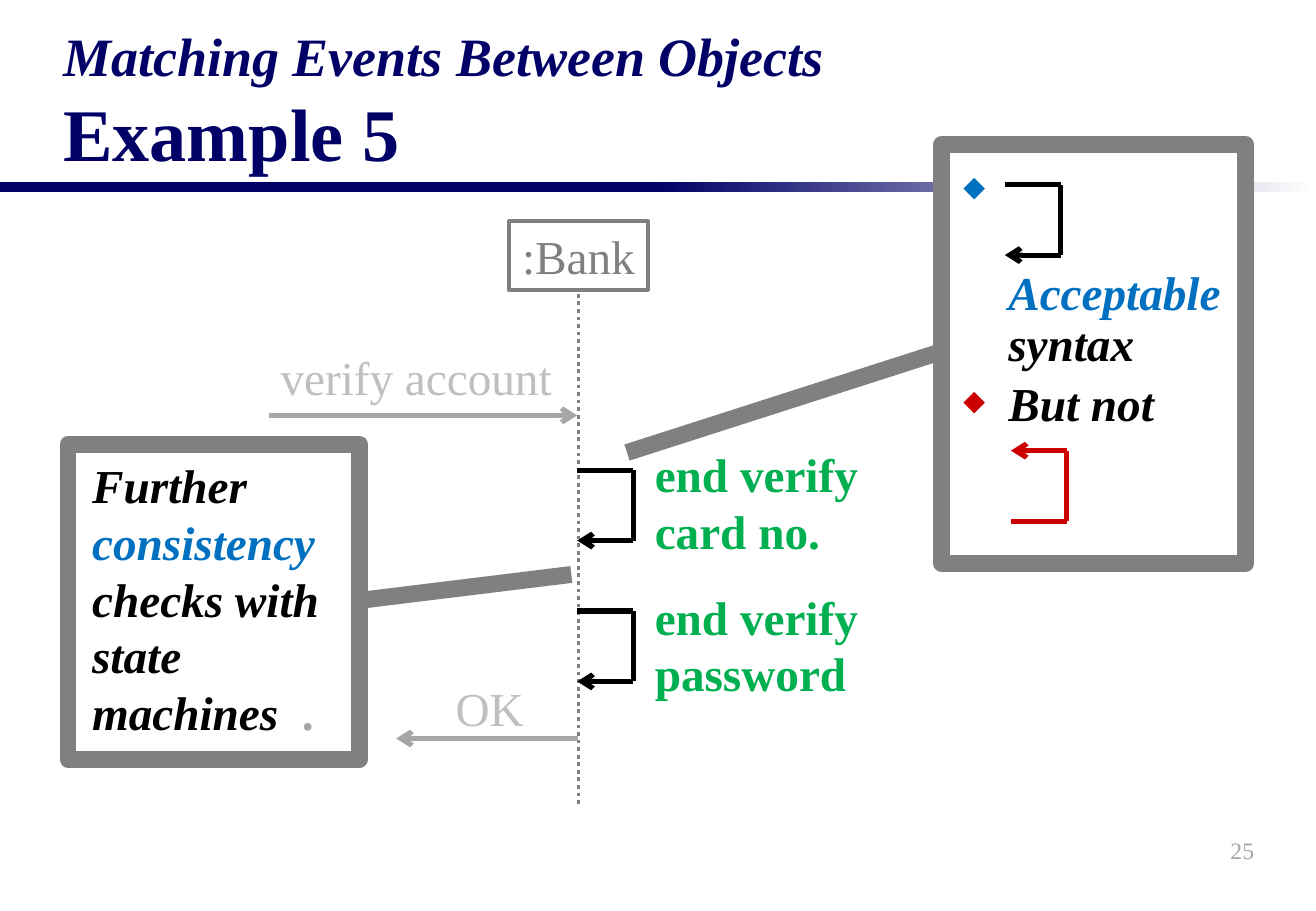
import pptx
import pptx.util
import pptx.dml.color
import pptx.enum.dml
import pptx.enum.shapes
import pptx.enum.text
import pptx.oxml
import pptx.oxml.ns
from dataclasses import dataclass

Inches, Pt = pptx.util.Inches, pptx.util.Pt
Shape = pptx.enum.shapes.MSO_SHAPE
Align = pptx.enum.text.PP_ALIGN
Anchor = pptx.enum.text.MSO_ANCHOR


@dataclass(frozen=True)
class Theme:
    font: str = "Times New Roman"
    navy: str = "000066"
    white: str = "FFFFFF"
    black: str = "000000"
    frame: str = "808080"
    arrow: str = "A6A6A6"
    faded: str = "BFBFBF"
    green: str = "00B050"
    blue: str = "0070C0"
    red: str = "CC0000"
    title: int = 44
    subtitle: int = 32
    body: int = 28
    number: int = 14
    thin: float = 2.25
    stroke: int = 3
    thick: int = 10


THEME = Theme()

TITLE = [[("Matching Events Between Objects\n", {"size": THEME.subtitle, "italic": True}),
          ("Example 5", {})]]
LABELS = [
    ("verify account", (2.21, 2.82, 2.43, 0.57), {"color": THEME.faded, "align": Align.CENTER}),
    ("OK", (3.65, 5.54, 0.76, 0.57), {"color": THEME.faded, "align": Align.CENTER}),
    ("end verify\ncard no.", (5.29, 3.62, 1.89, 1.04), {"color": THEME.green, "bold": True}),
    ("end verify\npassword", (5.29, 4.79, 1.89, 1.04), {"color": THEME.green, "bold": True}),
    ("25", (8.16, 6.75, 2.26, 0.5),
     {"color": THEME.arrow, "size": THEME.number, "align": Align.RIGHT, "anchor": Anchor.MIDDLE}),
]
CALLOUTS = [
    ((7.75, 1.19, 2.5, 3.45), (0.495, -0.005, 0.735, -1.036)),
    ((0.56, 3.66, 2.4, 2.59), (0.495, 1.005, 0.413, 1.726)),
]
SYNTAX_NOTE = [[("\n\nAcceptable\n", {"color": THEME.blue}), ("syntax", {})], [("But not", {})]]
CHECKS_NOTE = [[("Further\n", {}), ("consistency\n", {"color": THEME.blue}),
                ("checks with\nstate\nmachines  ", {}),
                (".", {"color": THEME.arrow, "italic": False})]]
MESSAGES = [((2.21, 3.42), (4.75, 3.42)), ((4.76, 6.08), (3.26, 6.08))]
LOOP_WIDTH, LOOP_HEIGHT = 0.46, 0.58
LOOPS = [
    (4.75, 3.87, LOOP_HEIGHT, THEME.black),
    (4.75, 5.03, LOOP_HEIGHT, THEME.black),
    (8.27, 1.52, LOOP_HEIGHT, THEME.black),
    (8.32, 4.29, -LOOP_HEIGHT, THEME.red),
]


def rgb(color):
    return pptx.dml.color.RGBColor.from_string(color)


def add_xml(parent, tag, **attributes):
    child = pptx.oxml.parse_xml(f"<a:{tag} {pptx.oxml.ns.nsdecls('a')}/>")
    for name, value in attributes.items():
        child.set(name, value)
    parent.append(child)
    return child


def write(frame, paragraphs, size=THEME.body, color=THEME.black, bold=False, italic=False,
          align=Align.LEFT, anchor=Anchor.TOP, wrap=False):
    if isinstance(paragraphs, str):
        paragraphs = [[(line, {})] for line in paragraphs.split("\n")]
    frame.word_wrap = wrap
    frame.auto_size = pptx.enum.text.MSO_AUTO_SIZE.NONE
    frame.vertical_anchor = anchor
    for index, spans in enumerate(paragraphs):
        para = frame.paragraphs[0] if index == 0 else frame.add_paragraph()
        para.alignment = align
        para.font.size = Pt(size)
        for text, changes in spans:
            look = {"size": size, "color": color, "bold": bold, "italic": italic, **changes}
            for number, line in enumerate(text.split("\n")):
                if number:
                    para.add_line_break()
                if line:
                    span = para.add_run()
                    span.text = line
                    span.font.name = THEME.font
                    span.font.size = Pt(look["size"])
                    span.font.bold = look["bold"]
                    span.font.italic = look["italic"]
                    span.font.color.rgb = rgb(look["color"])


def add_label(page, place, paragraphs, **look):
    box = page.shapes.add_textbox(*map(Inches, place))
    write(box.text_frame, paragraphs, **look)
    return box


def add_box(page, kind, place, fill=THEME.white, line=None, width=THEME.thin):
    box = page.shapes.add_shape(kind, *map(Inches, place))
    box.shadow.inherit = False
    box.fill.solid()
    box.fill.fore_color.rgb = rgb(fill)
    if line:
        box.line.color.rgb = rgb(line)
        box.line.width = Pt(width)
    else:
        box.line.fill.background()
    return box


def add_line(page, start, end, color, width=THEME.stroke, arrow=False, dash=None):
    line = page.shapes.add_connector(pptx.enum.shapes.MSO_CONNECTOR.STRAIGHT,
                                     *map(Inches, (*start, *end)))
    line.line.color.rgb = rgb(color)
    line.line.width = Pt(width)
    if dash:
        line.line.dash_style = dash
    if arrow:
        add_xml(line.line._get_or_add_ln(), "tailEnd", type="arrow")
    add_xml(line._element.spPr, "effectLst")


def add_loop(page, left, start, height, color):
    right, end = left + LOOP_WIDTH, start + height
    corners = [(left, start), (right, start), (right, end), (left, end)]
    for index in range(3):
        add_line(page, corners[index], corners[index + 1], color, arrow=index == 2)


def add_bullet(para, color):
    para.line_spacing = 0.9
    para.space_before = Pt(THEME.body * 0.2)
    properties = para._p.get_or_add_pPr()
    properties.set("marL", str(Inches(0.37)))
    properties.set("indent", str(-Inches(0.37)))
    add_xml(add_xml(properties, "buClr"), "srgbClr", val=color)
    add_xml(properties, "buSzPct", val="60000")
    add_xml(properties, "buChar", char="◆")


def add_header(page):
    title = page.shapes.title
    title.left, title.top, title.width, title.height = map(Inches, (0.42, 0.29, 10, 1.21))
    write(title.text_frame, TITLE, size=THEME.title, color=THEME.navy, bold=True,
          anchor=Anchor.BOTTOM, wrap=True)
    add_box(page, Shape.RECTANGLE, (0, 1.5, 5.42, 0.08), THEME.navy)
    fade = add_box(page, Shape.RECTANGLE, (5.41, 1.5, 5.42, 0.08))
    fade.fill.gradient()
    fade.fill.gradient_angle = 0
    for stop, color, position in zip(fade.fill.gradient_stops, (THEME.navy, THEME.white), (0, 1)):
        stop.color.rgb = rgb(color)
        stop.position = position


def main():
    deck = pptx.Presentation()
    deck.slide_width, deck.slide_height = Inches(10.83), Inches(7.5)
    page = deck.slides.add_slide(deck.slide_layouts.get_by_name("Title Only"))
    add_header(page)
    bank = add_box(page, Shape.RECTANGLE, (4.19, 1.82, 1.14, 0.57), line=THEME.frame)
    write(bank.text_frame, ":Bank", color=THEME.frame, align=Align.CENTER)
    for text, place, look in LABELS:
        add_label(page, place, text, **look)
    for place, pointer in CALLOUTS:
        callout = add_box(page, Shape.LINE_CALLOUT_1, place, line=THEME.frame, width=THEME.thick)
        for index, value in enumerate(pointer):
            callout.adjustments[index] = value
    syntax = add_label(page, (7.83, 1.33, 2.4, 2.74), SYNTAX_NOTE, bold=True, italic=True, wrap=True)
    for para, color in zip(syntax.text_frame.paragraphs, (THEME.blue, THEME.red)):
        add_bullet(para, color)
    add_label(page, (0.66, 3.71, 2.09, 2.46), CHECKS_NOTE, bold=True, italic=True)
    add_line(page, (4.76, 2.42), (4.76, 6.62), THEME.frame, THEME.thin,
             dash=pptx.enum.dml.MSO_LINE.ROUND_DOT)
    for start, end in MESSAGES:
        add_line(page, start, end, THEME.arrow, arrow=True)
    for loop in LOOPS:
        add_loop(page, *loop)
    deck.save("out.pptx")


if __name__ == "__main__":
    main()
